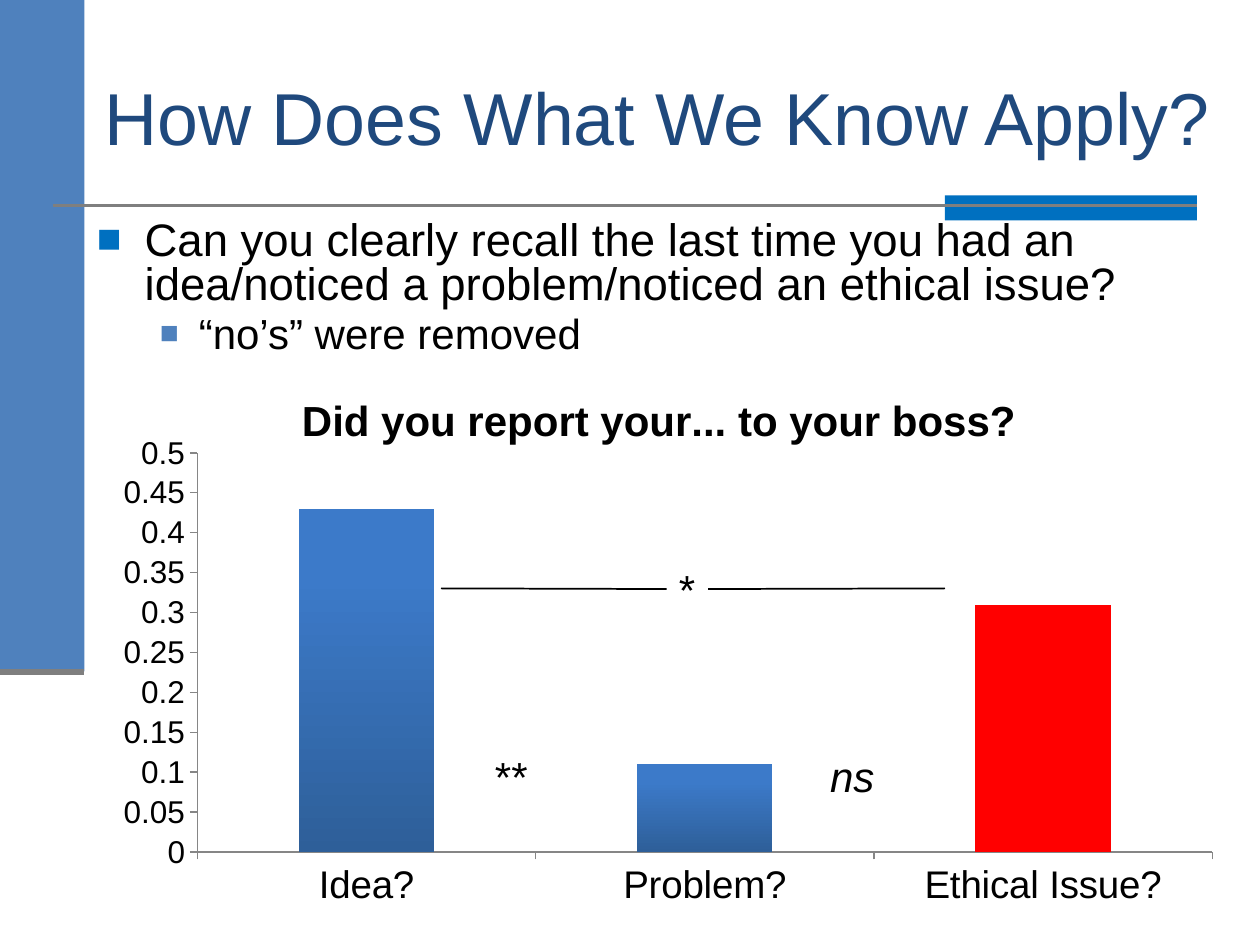
from lxml import etree
from pptx import Presentation
from pptx.chart.data import CategoryChartData
from pptx.dml.color import RGBColor
from pptx.enum.chart import XL_CHART_TYPE, XL_TICK_MARK
from pptx.enum.shapes import MSO_CONNECTOR, MSO_SHAPE
from pptx.enum.text import MSO_ANCHOR, MSO_AUTO_SIZE
from pptx.oxml import parse_xml
from pptx.oxml.ns import nsdecls, qn
from pptx.util import Inches, Pt

COLUMNS = XL_CHART_TYPE.COLUMN_CLUSTERED
TICK_OUT, TICK_NONE = XL_TICK_MARK.OUTSIDE, XL_TICK_MARK.NONE
RECTANGLE, STRAIGHT = MSO_SHAPE.RECTANGLE, MSO_CONNECTOR.STRAIGHT
TOP, MIDDLE = MSO_ANCHOR.TOP, MSO_ANCHOR.MIDDLE
GROW, FIXED = MSO_AUTO_SIZE.SHAPE_TO_FIT_TEXT, MSO_AUTO_SIZE.NONE
LEFT_SIDE, RIGHT_SIDE = 1, 3

THEME = {
    "font": "Arial",
    "title": "1F497D", "text": "000000", "band": "4F81BD", "accent": "0070C0",
    "rule": "7F7F7F", "axis": "868686", "highlight": "FF0000",
    "bar_bottom": "2E5F99", "bar_top": "3C7AC9",
    "title_size": 42, "body_size": 26, "sub_size": 24, "mark_size": 24,
    "chart_title_size": 24, "category_size": 22, "value_size": 18,
}

WIDTH, HEIGHT = 10, 7.5
BAND_WIDTH, BAND_HEIGHT = 0.67, 5.33
RULE_Y, RULE_END = 1.63, 9.5

TITLE = "How Does What We Know Apply?"
BULLETS = [
    dict(text="Can you clearly recall the last time you had an "
              "idea/noticed a problem/noticed an ethical issue?",
         size="body_size", indent=0.38, hang=0.38, color="accent", percent=90),
    dict(text="“no’s” were removed",
         size="sub_size", indent=0.81, hang=0.31, color="band", percent=75),
]
CHART_TITLE = "Did you report your... to your boss?"
SERIES_NAME = "Series 1"
REPORTED = {"Idea?": 0.43, "Problem?": 0.11, "Ethical Issue?": 0.31}
HIGHLIGHTED = "Ethical Issue?"
PLOT_SHARES = {"x": 0.093, "y": 0.15, "w": 0.895, "h": 0.704}
MARKS = [  # text, left, top, width, italic
    ("**", 3.83, 5.91, 0.46, False),
    ("ns", 6.49, 5.91, 0.64, True),
    ("*", 5.29, 4.42, 0.33, False),
]
MARK_HEIGHT = 0.51
BRACKET_ENDS = [(3.5, LEFT_SIDE), (7.5, RIGHT_SIDE)]


def rgb(name):
    return RGBColor.from_string(THEME[name])


def style_font(font, size, color="text", bold=False, italic=False):
    font.name, font.size = THEME["font"], Pt(THEME[size])
    font.bold, font.italic = bold, italic
    font.color.rgb = rgb(color)


def add_text(slide, box, texts, sizes, color="text", italic=False,
             anchor=TOP, wrap=True, grow=False):
    """Add a text box with one paragraph per text and return it."""
    shape = slide.shapes.add_textbox(*map(Inches, box))
    frame = shape.text_frame
    frame.word_wrap, frame.vertical_anchor = wrap, anchor
    frame.auto_size = GROW if grow else FIXED
    for index, (text, size) in enumerate(zip(texts, sizes)):
        paragraph = frame.add_paragraph() if index else frame.paragraphs[0]
        run = paragraph.add_run()
        run.text = text
        style_font(run.font, size, color, italic=italic)
    return shape


def add_block(slide, box, color):
    shape = slide.shapes.add_shape(RECTANGLE, *map(Inches, box))
    shape.shadow.inherit = False
    shape.fill.solid()
    shape.fill.fore_color.rgb = rgb(color)
    shape.line.fill.background()


def add_line(slide, start, end, color, weight):
    line = slide.shapes.add_connector(STRAIGHT, *map(Inches, start + end))
    line.line.color.rgb, line.line.width = rgb(color), Pt(weight)
    etree.SubElement(line._element.spPr, qn("a:effectLst"))
    return line


def set_bullet(paragraph, bullet):
    paragraph.line_spacing = 0.8
    paragraph.space_before = Pt(round(0.2 * THEME[bullet["size"]]))
    properties = paragraph._p.get_or_add_pPr()
    properties.set("marL", str(Inches(bullet["indent"])))
    properties.set("indent", str(-Inches(bullet["hang"])))
    color = etree.SubElement(properties, qn("a:buClr"))
    etree.SubElement(color, qn("a:srgbClr"), val=THEME[bullet["color"]])
    etree.SubElement(properties, qn("a:buSzPct"), val=str(bullet["percent"] * 1000))
    etree.SubElement(properties, qn("a:buFont"), typeface=THEME["font"])
    etree.SubElement(properties, qn("a:buChar"), char="■")


def set_plot_layout(chart):
    modes = "".join(f'<c:{key}Mode val="edge"/>' for key in "xy")
    shares = "".join(f'<c:{key} val="{share}"/>' for key, share in PLOT_SHARES.items())
    layout = parse_xml(
        f'<c:layout {nsdecls("c")}><c:manualLayout><c:layoutTarget val="inner"/>'
        f"{modes}{shares}</c:manualLayout></c:layout>")
    plot_area = chart._chartSpace.chart.plotArea
    for old in plot_area.findall(qn("c:layout")):
        plot_area.remove(old)
    plot_area.insert(0, layout)


def add_bar_chart(slide, box):
    data = CategoryChartData()
    data.categories = list(REPORTED)
    data.add_series(SERIES_NAME, list(REPORTED.values()))
    chart = slide.shapes.add_chart(COLUMNS, *map(Inches, box), data).chart
    chart.has_legend = False
    run = chart.chart_title.text_frame.paragraphs[0].add_run()
    run.text = CHART_TITLE
    style_font(run.font, "chart_title_size", bold=True)
    chart.chart_title.include_in_layout = False
    set_plot_layout(chart)

    for axis, size in ((chart.category_axis, "category_size"),
                       (chart.value_axis, "value_size")):
        style_font(axis.tick_labels.font, size)
        axis.has_major_gridlines = False
        axis.major_tick_mark, axis.minor_tick_mark = TICK_OUT, TICK_NONE
        axis.format.line.color.rgb = rgb("axis")
    chart.value_axis.minimum_scale, chart.value_axis.maximum_scale = 0, 0.5
    chart.value_axis.major_unit = 0.05

    plot = chart.plots[0]
    plot.gap_width, plot.vary_by_categories = 150, False
    series = plot.series[0]
    series.invert_if_negative = False
    fill = series.format.fill
    fill.gradient()
    fill.gradient_angle = 90
    for stop, color, position in zip(fill.gradient_stops,
                                     ("bar_bottom", "bar_top"), (0, 0.8)):
        stop.color.rgb, stop.position = rgb(color), position
    point_fill = series.points[list(REPORTED).index(HIGHLIGHTED)].format.fill
    point_fill.solid()
    point_fill.fore_color.rgb = rgb("highlight")


def main():
    presentation = Presentation()
    presentation.slide_width, presentation.slide_height = Inches(WIDTH), Inches(HEIGHT)
    slide = presentation.slides.add_slide(presentation.slide_layouts[6])

    add_block(slide, (0, 0, BAND_WIDTH, BAND_HEIGHT), "band")
    add_block(slide, (RULE_END - 2, 1.55, 2, 0.2), "accent")
    add_line(slide, (0.42, RULE_Y), (RULE_END, RULE_Y), "rule", 1.5)
    add_line(slide, (0, BAND_HEIGHT), (BAND_WIDTH, BAND_HEIGHT), "rule", 3.5)

    add_text(slide, (0.73, 0.3, 9.85, 1.25), [TITLE], ["title_size"],
             color="title", anchor=MIDDLE)
    body = add_text(slide, (BAND_WIDTH, 1.71, 9, 1.27),
                    [bullet["text"] for bullet in BULLETS],
                    [bullet["size"] for bullet in BULLETS])
    for paragraph, bullet in zip(body.text_frame.paragraphs, BULLETS):
        set_bullet(paragraph, bullet)

    add_bar_chart(slide, (0.73, 2.92, 9, 4.5))
    marks = {}
    for text, left, top, width, italic in MARKS:
        marks[text] = add_text(slide, (left, top, width, MARK_HEIGHT), [text],
                               ["mark_size"], italic=italic, wrap=False, grow=True)
    bracket_y = 4.67
    for x, side in BRACKET_ENDS:
        line = add_line(slide, (x, bracket_y), (x, bracket_y), "text", 1)
        line.end_connect(marks["*"], side)

    presentation.save("out.pptx")


if __name__ == "__main__":
    main()
